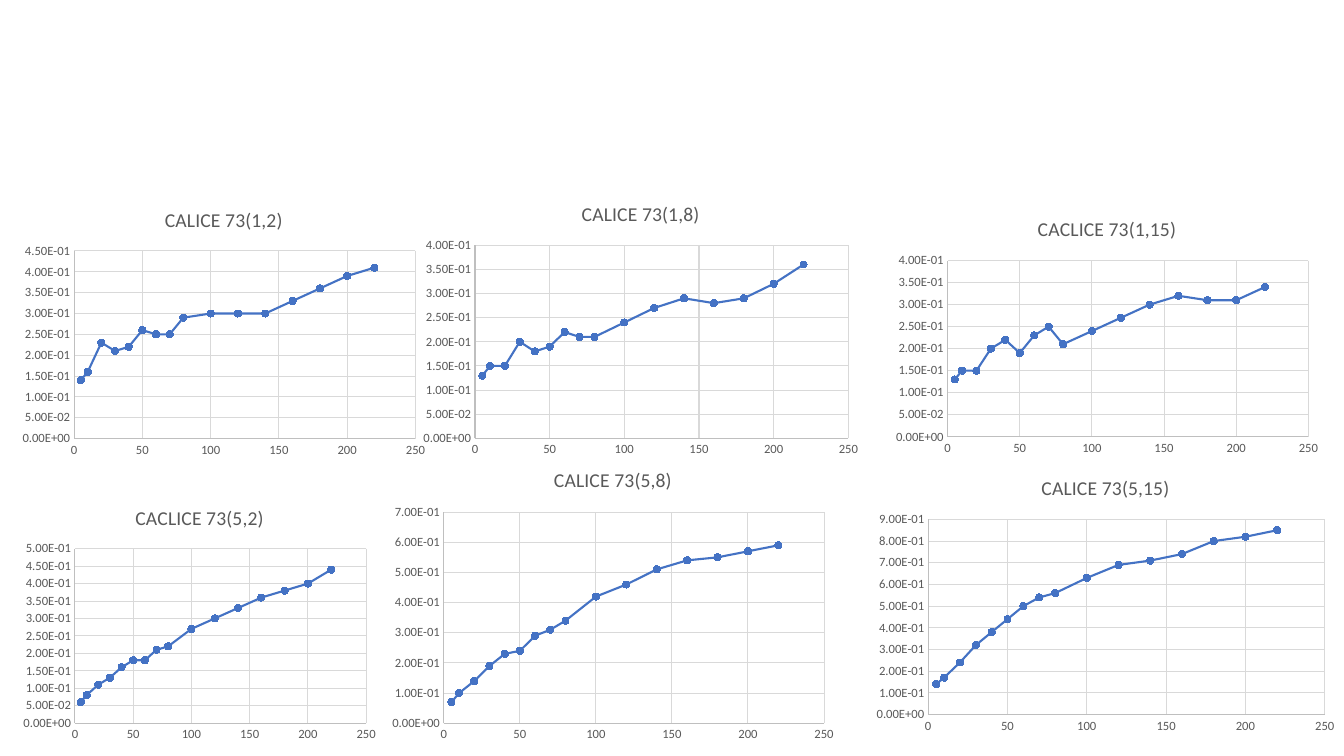
from dataclasses import dataclass

from pptx import Presentation
from pptx.chart.axis import ValueAxis
from pptx.chart.data import XyChartData
from pptx.dml.color import RGBColor
from pptx.dml.line import LineFormat
from pptx.enum.chart import XL_CHART_TYPE, XL_MARKER_STYLE, XL_TICK_MARK
from pptx.slide import Slide
from pptx.text.text import Font
from pptx.util import Inches, Pt

SCATTER_LINES = XL_CHART_TYPE.XY_SCATTER_LINES
CIRCLE = XL_MARKER_STYLE.CIRCLE
NO_TICK = XL_TICK_MARK.NONE

COLORS = {
    "text": "595959",
    "axis": "BFBFBF",
    "grid": "D9D9D9",
    "curve": "4472C4",
}
FONT_FORMAT = {"name": "Calibri", "bold": False}
AXIS_FORMAT = {
    "minimum_scale": 0,
    "has_major_gridlines": True,
    "has_minor_gridlines": False,
    "major_tick_mark": NO_TICK,
    "minor_tick_mark": NO_TICK,
}
ENERGIES = (*range(10, 90, 10), *range(100, 240, 20))
X_VALUES = (5, *ENERGIES)


@dataclass(frozen=True)
class ResponsePlot:
    title: str
    left: float
    top: float
    width: float
    height: float
    maximum: float
    step: float
    values: tuple[float, ...]


PLOTS = (
    ResponsePlot("CALICE 73(5,8)", 3.8, 4.48, 4.56, 2.94, 0.7, 0.1,
                 (0.07, 0.1, 0.14, 0.19, 0.23, 0.24, 0.29, 0.31,
                  0.34, 0.42, 0.46, 0.51, 0.54, 0.55, 0.57, 0.59)),
    ResponsePlot("CALICE 73(5,15)", 8.6, 4.56, 4.73, 2.77, 0.9, 0.1,
                 (0.14, 0.17, 0.24, 0.32, 0.38, 0.44, 0.5, 0.54,
                  0.56, 0.63, 0.69, 0.71, 0.74, 0.8, 0.82, 0.85)),
    ResponsePlot("CALICE 73(1,8)", 4.11, 1.84, 4.49, 2.75, 0.4, 0.05,
                 (0.13, 0.15, 0.15, 0.2, 0.18, 0.19, 0.22, 0.21,
                  0.21, 0.24, 0.27, 0.29, 0.28, 0.29, 0.32, 0.36)),
    ResponsePlot("CACLICE 73(1,15)", 8.8, 2, 4.36, 2.57, 0.4, 0.05,
                 (0.13, 0.15, 0.15, 0.2, 0.22, 0.19, 0.23, 0.25,
                  0.21, 0.24, 0.27, 0.3, 0.32, 0.31, 0.31, 0.34)),
    ResponsePlot("CALICE 73(1,2)", 0.14, 1.9, 4.16, 2.69, 0.45, 0.05,
                 (0.14, 0.16, 0.23, 0.21, 0.22, 0.26, 0.25, 0.25,
                  0.29, 0.3, 0.3, 0.3, 0.33, 0.36, 0.39, 0.41)),
    ResponsePlot("CACLICE 73(5,2)", 0.16, 4.86, 3.64, 2.55, 0.5, 0.05,
                 (0.06, 0.08, 0.11, 0.13, 0.16, 0.18, 0.18, 0.21,
                  0.22, 0.27, 0.3, 0.33, 0.36, 0.38, 0.4, 0.44)),
)


def set_attributes(target: object, formats: dict) -> None:
    for attribute, value in formats.items():
        setattr(target, attribute, value)


def style_font(font: Font, size: float) -> None:
    set_attributes(font, {**FONT_FORMAT, "size": Pt(size)})
    font.color.rgb = RGBColor.from_string(COLORS["text"])


def style_line(line: LineFormat, color: str, width: float) -> None:
    line.color.rgb = RGBColor.from_string(COLORS[color])
    line.width = Pt(width)


def style_axis(axis: ValueAxis, maximum: float, step: float, number_format: str) -> None:
    set_attributes(axis, {**AXIS_FORMAT, "maximum_scale": maximum, "major_unit": step})
    set_attributes(axis.tick_labels, {"number_format": number_format,
                                      "number_format_is_linked": False})
    style_font(axis.tick_labels.font, 9)
    style_line(axis.format.line, "axis", 0.75)
    style_line(axis.major_gridlines.format.line, "grid", 0.75)


def draw_plot(slide: Slide, plot: ResponsePlot) -> None:
    data = XyChartData()
    points = data.add_series("Series 1")
    for x, y in zip(X_VALUES, plot.values):
        points.add_data_point(x, y)
    frame = (Inches(side) for side in (plot.left, plot.top, plot.width, plot.height))
    chart = slide.shapes.add_chart(SCATTER_LINES, *frame, data).chart

    set_attributes(chart, {"has_legend": False, "has_title": True})
    set_attributes(chart.font, {"name": "Calibri", "size": Pt(10)})
    heading = chart.chart_title.text_frame
    heading.text = plot.title
    style_font(heading.paragraphs[0].runs[0].font, 14)

    style_axis(chart.category_axis, 250, 50, "General")
    style_axis(chart.value_axis, plot.maximum, plot.step, "0.00E+00")

    chart.plots[0].vary_by_categories = False
    curve = chart.plots[0].series[0]
    curve.smooth = False
    style_line(curve.format.line, "curve", 1.5)
    set_attributes(curve.marker, {"style": CIRCLE, "size": 5})
    curve.marker.format.fill.solid()
    curve.marker.format.fill.fore_color.rgb = RGBColor.from_string(COLORS["curve"])
    style_line(curve.marker.format.line, "curve", 0.75)


def main() -> None:
    presentation = Presentation()
    presentation.slide_width = Inches(13.33)
    presentation.slide_height = Inches(7.5)
    slide = presentation.slides.add_slide(presentation.slide_layouts[6])
    for plot in PLOTS:
        draw_plot(slide, plot)
    presentation.save("out.pptx")


if __name__ == "__main__":
    main()
